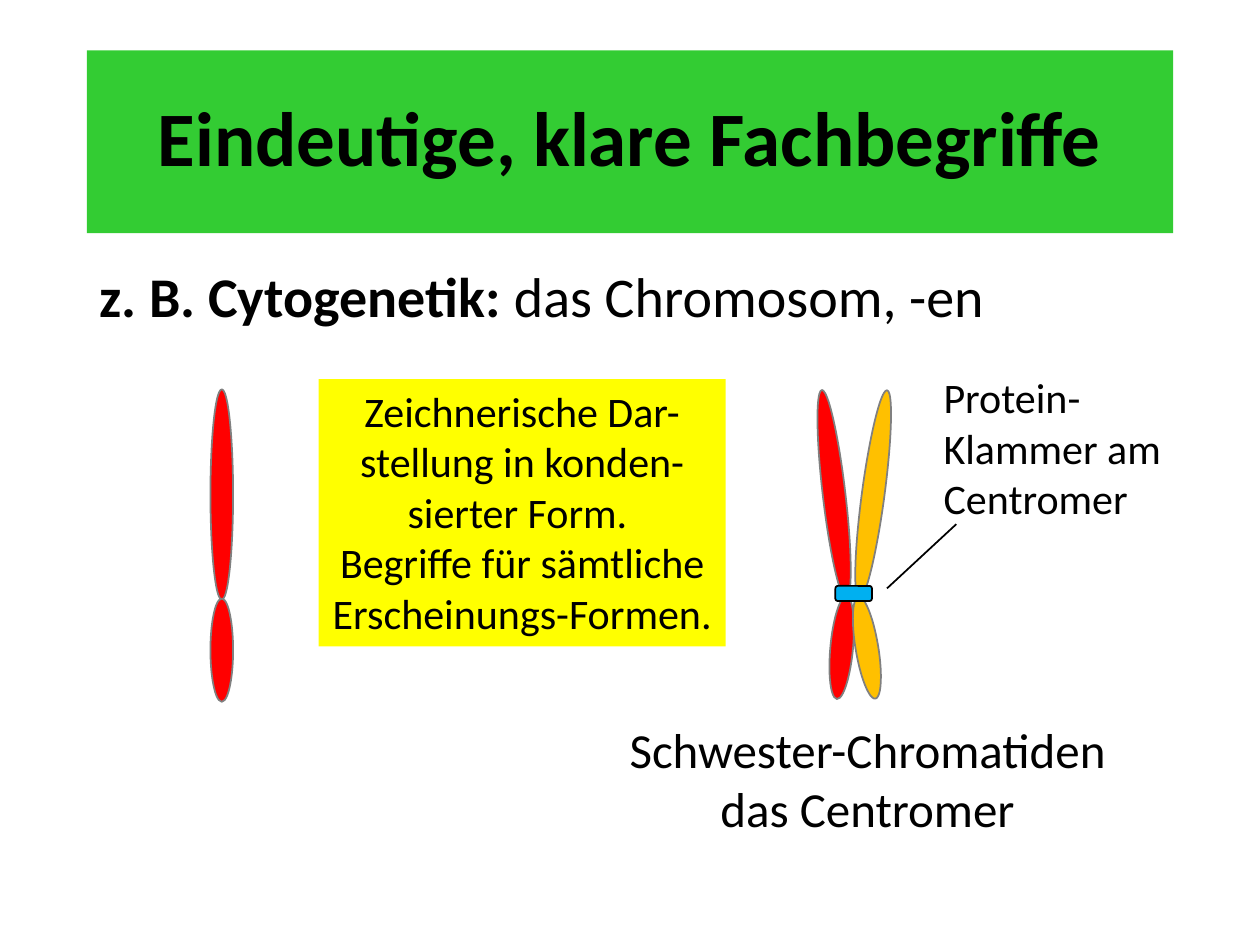
"""Build the slide on clear technical terms, with chromosome drawings."""
from lxml import etree
from pptx import Presentation
from pptx.dml.color import RGBColor
from pptx.enum.shapes import MSO_CONNECTOR, MSO_SHAPE
from pptx.enum.text import MSO_ANCHOR, PP_ALIGN
from pptx.oxml.ns import qn
from pptx.util import Inches, Pt

OVAL, ROUNDED = MSO_SHAPE.OVAL, MSO_SHAPE.ROUNDED_RECTANGLE
LEFT, CENTER = PP_ALIGN.LEFT, PP_ALIGN.CENTER
TOP, MIDDLE = MSO_ANCHOR.TOP, MSO_ANCHOR.MIDDLE
STRAIGHT = MSO_CONNECTOR.STRAIGHT

THEME = {
    "font": "Calibri",
    "text": "000000",
    "banner": "33CC33",
    "note": "FFFF00",
    "chromatid": "FF0000",
    "sister": "FFC000",
    "clamp": "00B0F0",
    "outline": "808080",
    "title_size": 44,
    "topic_size": 32,
    "caption_size": 28,
    "note_size": 24,
}

TEXTS = [
    {"box": (0.69, 0.4, 8.62, 1.45), "size": "title_size", "fill": "banner",
     "align": CENTER, "anchor": MIDDLE, "spacing": 0.9,
     "lines": [[("Eindeutige, klare Fachbegriffe", True)]]},
    {"box": (0.69, 2.03, 8.62, 1.18), "size": "topic_size",
     "lines": [[("z. B. Cytogenetik: ", True), ("das Chromosom, -en", False)]]},
    {"box": (4.52, 5.66, 4.73, 1.04), "size": "caption_size", "align": CENTER,
     "lines": [[("Schwester-Chromatiden", False)], [("das Centromer", False)]]},
    {"box": (2.53, 3.01, 3.23, 2.12), "size": "note_size", "fill": "note",
     "align": CENTER,
     "lines": [[("Zeichnerische Dar-stellung in konden-sierter Form. ", False)],
               [("Begriffe für sämtliche Erscheinungs-Formen.", False)]]},
    {"box": (7.39, 2.9, 2.02, 1.31), "size": "note_size",
     "lines": [[("Protein-Klammer am Centromer", False)]]},
]

ARM_WIDTH, LONG_ARM, SHORT_ARM = 0.18, 1.67, 0.82
ARMS = [
    (1.67, 3.09, LONG_ARM, 0, "chromatid"),
    (1.67, 4.75, SHORT_ARM, 0, "chromatid"),
    (6.53, 3.09, LONG_ARM, 353.3, "chromatid"),
    (6.59, 4.73, SHORT_ARM, 5.3, "chromatid"),
    (6.84, 3.09, LONG_ARM, 7.6, "sister"),
    (6.79, 4.73, SHORT_ARM, 350.6, "sister"),
]
CLAMP = (6.63, 4.65, 0.29, 0.12)
POINTER = (7.04, 4.67, 7.59, 4.16)


def color(role):
    return RGBColor.from_string(THEME[role])


def inches(lengths):
    return [Inches(length) for length in lengths]


def add_text(slide, item):
    box = slide.shapes.add_textbox(*inches(item["box"]))
    if "fill" in item:
        box.fill.solid()
        box.fill.fore_color.rgb = color(item["fill"])
    frame = box.text_frame
    frame.word_wrap = True
    frame.vertical_anchor = item.get("anchor", TOP)
    for index, line in enumerate(item["lines"]):
        paragraph = frame.add_paragraph() if index else frame.paragraphs[0]
        paragraph.alignment = item.get("align", LEFT)
        paragraph.line_spacing = item.get("spacing", 1.0)
        paragraph.font.name = THEME["font"]
        paragraph.font.size = Pt(THEME[item["size"]])
        paragraph.font.color.rgb = color("text")
        for words, bold in line:
            run = paragraph.add_run()
            run.text = words
            run.font.bold = bold


def add_part(slide, preset, box, fill, outline, rotation=0):
    part = slide.shapes.add_shape(preset, *inches(box))
    part.shadow.inherit = False
    part.rotation = rotation
    part.fill.solid()
    part.fill.fore_color.rgb = color(fill)
    part.line.color.rgb = color(outline)
    part.line.width = Pt(1)


def add_pointer(slide):
    pointer = slide.shapes.add_connector(STRAIGHT, *inches(POINTER))
    pointer.line.color.rgb = color("text")
    pointer.line.width = Pt(1)
    etree.SubElement(pointer._element.spPr, qn("a:effectLst"))


def main():
    deck = Presentation()
    deck.slide_width, deck.slide_height = Inches(10), Inches(7.5)
    slide = deck.slides.add_slide(deck.slide_layouts[6])
    for item in TEXTS:
        add_text(slide, item)
    for left, top, length, rotation, fill in ARMS:
        add_part(slide, OVAL, (left, top, ARM_WIDTH, length), fill, "outline", rotation)
    add_part(slide, ROUNDED, CLAMP, "clamp", "text")
    add_pointer(slide)
    deck.save("out.pptx")


if __name__ == "__main__":
    main()
